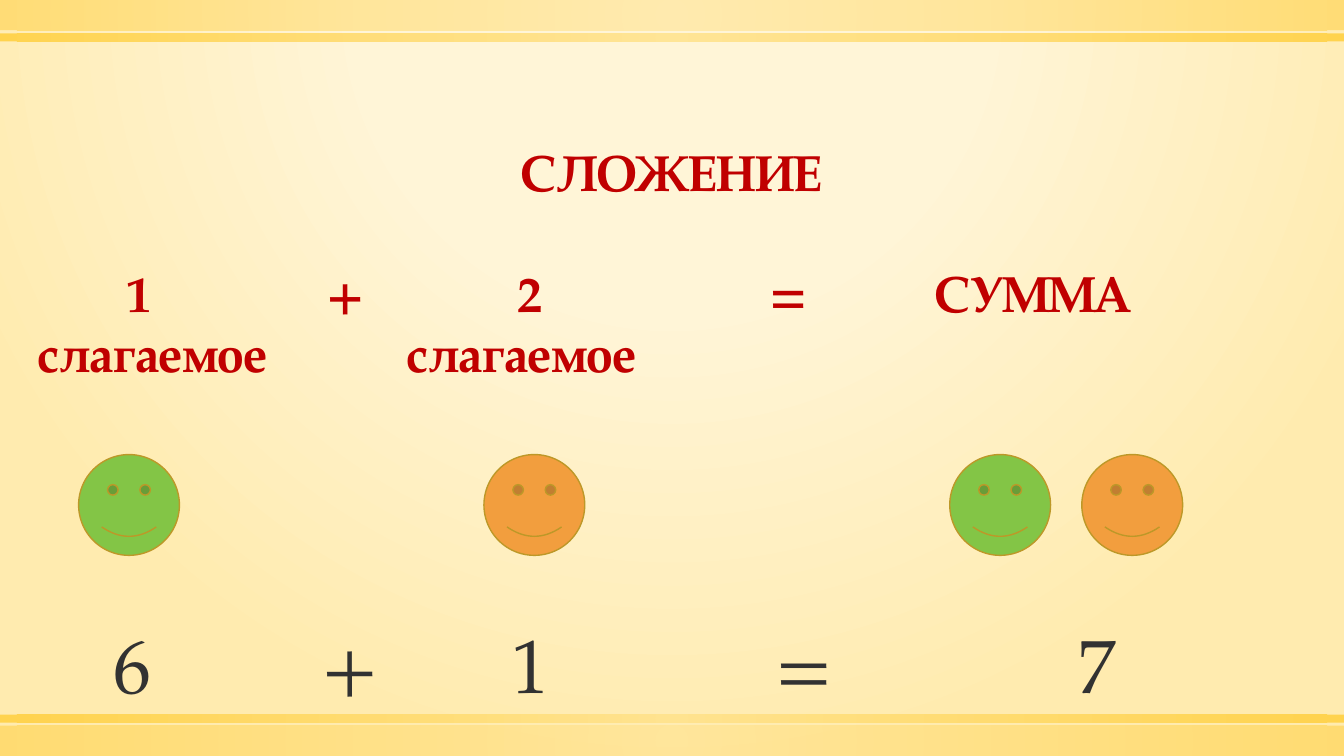
from pptx import Presentation
from pptx.dml.color import RGBColor
from pptx.enum.shapes import MSO_SHAPE
from pptx.enum.text import MSO_ANCHOR, PP_ALIGN
from pptx.oxml import parse_xml
from pptx.oxml.ns import nsdecls, qn
from pptx.util import Inches, Pt

COLORS = {
    "term": "C00000",
    "number": "323232",
    "green": "83C546",
    "orange": "F29E3E",
    "outline": "BD9828",
    "cream": "FFF5D7",
    "sand": "FFEBAF",
    "band_light": "FFE186",
    "band_dark": "FFCD36",
}
FONT = "TeX Gyre Pagella"


def color(name):
    """Return the named palette colour."""
    return RGBColor.from_string(COLORS[name])


def set_radial_fill(holder, stops, focus):
    """Replace the solid fill of an XML holder with a radial gradient."""
    stop_xml = "".join(
        f'<a:gs pos="{position * 1000}"><a:srgbClr val="{COLORS[name]}">'
        f'<a:alpha val="{opacity * 1000}"/></a:srgbClr></a:gs>'
        for position, name, opacity in stops
    )
    left, top, right, bottom = (edge * 1000 for edge in focus)
    gradient = parse_xml(
        f'<a:gradFill {nsdecls("a")} rotWithShape="1"><a:gsLst>{stop_xml}</a:gsLst>'
        f'<a:path path="circle"><a:fillToRect l="{left}" t="{top}" r="{right}" '
        f'b="{bottom}"/></a:path></a:gradFill>'
    )
    holder.replace(holder.find(qn("a:solidFill")), gradient)


def write_text(frame, text, size, ink, bold=False):
    """Write one centred line into a text frame."""
    frame.word_wrap = True
    frame.vertical_anchor = MSO_ANCHOR.MIDDLE
    frame.margin_left = frame.margin_right = 0
    frame.margin_top = frame.margin_bottom = 0
    line = frame.paragraphs[0]
    line.alignment = PP_ALIGN.CENTER
    run = line.add_run()
    run.text = text
    run.font.name = FONT
    run.font.size = Pt(size)
    run.font.bold = bold
    run.font.color.rgb = color(ink)


def add_background(slide):
    """Fill the slide with a soft radial glow."""
    slide.background.fill.solid()
    holder = slide.element.find(".//" + qn("p:bgPr"))
    stops = [(0, "cream", 59), (40, "cream", 66), (100, "sand", 100)]
    set_radial_fill(holder, stops, (50, -80, 50, 180))


def add_band(slide, top, height, opacity):
    """Add a full-width golden band."""
    band = slide.shapes.add_shape(
        MSO_SHAPE.RECTANGLE, 0, Inches(top), Inches(13.33), Inches(height)
    )
    band.shadow.inherit = False
    band.line.fill.background()
    band.fill.solid()
    stops = [(0, "band_light", opacity), (100, "band_dark", opacity)]
    set_radial_fill(band.element.spPr, stops, (50, 50, 50, 50))


def add_title(slide, left, top, width, height):
    """Place the heading in the title placeholder."""
    title = slide.shapes.title
    title.left, title.top = Inches(left), Inches(top)
    title.width, title.height = Inches(width), Inches(height)
    write_text(title.text_frame, "СЛОЖЕНИЕ", 36, "term", bold=True)


def add_row(slide, middle, height, entries, **text_format):
    """Write entries centred on their columns along one row."""
    width = 2.8
    for center, text in entries:
        entry = slide.shapes.add_textbox(
            Inches(center - width / 2), Inches(middle - height / 2),
            Inches(width), Inches(height),
        )
        write_text(entry.text_frame, text, **text_format)


def add_smileys(slide, top, size, faces):
    """Add a row of smiling faces."""
    for left, fill in faces:
        smiley = slide.shapes.add_shape(
            MSO_SHAPE.SMILEY_FACE, Inches(left), Inches(top), Inches(size), Inches(size)
        )
        smiley.shadow.inherit = False
        smiley.fill.solid()
        smiley.fill.fore_color.rgb = color(fill)
        smiley.line.color.rgb = color("outline")
        smiley.line.width = Pt(1)


def main():
    """Build the addition slide."""
    deck = Presentation()
    deck.slide_width, deck.slide_height = Inches(13.33), Inches(7.5)
    slide = deck.slides.add_slide(deck.slide_layouts[5])
    add_background(slide)
    for top, height, opacity in [(7.2, 0.3, 50), (7.09, 0.08, 80), (0, 0.3, 50), (0.33, 0.08, 80)]:
        add_band(slide, top, height, opacity)
    add_title(slide, 0.28, 1.36, 12.76, 0.67)
    terms = [(1.38, "1"), (3.43, "+"), (5.26, "2"), (7.82, "="), (10.24, "СУММА")]
    labels = [(1.51, "слагаемое"), (5.17, "слагаемое")]
    numbers = [(1.31, "6"), (3.47, "+"), (5.26, "1"), (7.98, "="), (10.88, "7")]
    add_row(slide, 2.9, 0.6, terms, size=36, ink="term", bold=True)
    add_row(slide, 3.5, 0.6, labels, size=36, ink="term", bold=True)
    add_row(slide, 6.58, 0.9, numbers, size=54, ink="number")
    add_smileys(
        slide, 4.51, 1,
        [(0.78, "green"), (4.8, "orange"), (9.42, "green"), (10.73, "orange")],
    )
    deck.save("out.pptx")


if __name__ == "__main__":
    main()
